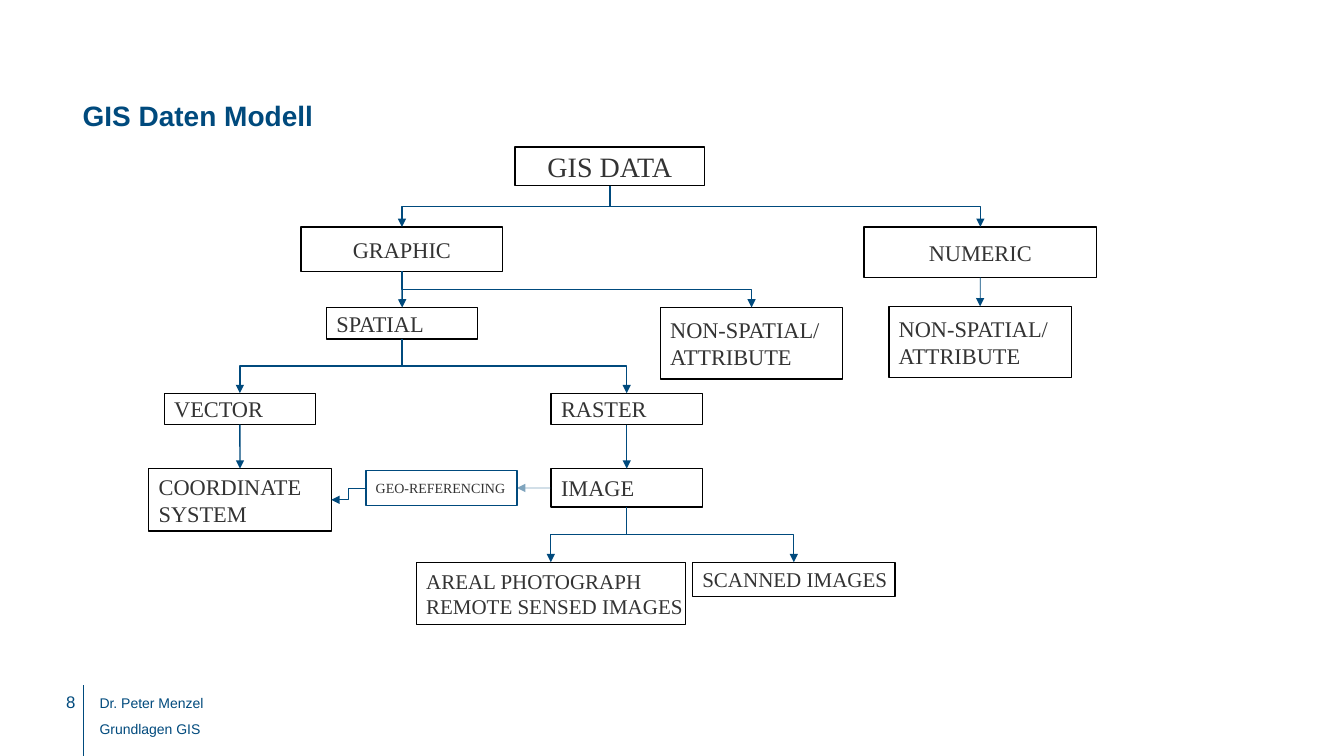
from lxml.etree import SubElement
from pptx import Presentation
from pptx.dml.color import RGBColor
from pptx.enum.shapes import MSO_CONNECTOR, MSO_SHAPE
from pptx.enum.text import MSO_ANCHOR, PP_ALIGN
from pptx.oxml.ns import qn
from pptx.util import Cm, Pt


class Theme:
    blue = RGBColor(0x00, 0x4A, 0x7D)
    black = RGBColor(0, 0, 0)
    grey = RGBColor(0x33, 0x33, 0x33)
    sans, serif = "Arial", "Times New Roman"
    head, node, leaf, number, small = 20, 16, 15, 12, 10
    thin, thick = Pt(0.5), Pt(1)


def write(frame, text, size, face, color, align=PP_ALIGN.LEFT, gap=1.0, bold=False):
    frame.text = text
    for para in frame.paragraphs:
        para.alignment = align
        para.line_spacing = gap
        para.font.size = Pt(size)
        para.font.name = face
        para.font.bold = bold
        para.font.color.rgb = color


def link(kind, start, end, width):
    line = slide.shapes.add_connector(kind, *start, *end)
    line.line.color.rgb = Theme.blue
    line.line.width = width
    SubElement(line._element.spPr, qn("a:effectLst"))
    return line


deck = Presentation()
deck.slide_width, deck.slide_height = Cm(33.87), Cm(19.05)
slide = deck.slides.add_slide(deck.slide_layouts[5])

link(MSO_CONNECTOR.STRAIGHT, (Cm(2.11), Cm(19.05)), (Cm(2.11), Cm(17.27)), Theme.thin)

title = slide.shapes.title
title.left, title.top, title.width, title.height = Cm(2.08), Cm(2.57), Cm(30.5), Cm(2.16)
frame = title.text_frame
frame.margin_left = frame.margin_top = 0
frame.vertical_anchor = MSO_ANCHOR.TOP
write(frame, "GIS Daten Modell", Theme.head, Theme.sans, Theme.blue, gap=0.9, bold=True)

footers = [
    ("8", 0.53, 17.42, 1.37, 1.02, Theme.number, PP_ALIGN.RIGHT, 1.0),
    ("Dr. Peter Menzel\nGrundlagen GIS", 2.51, 17.3, 19.08, 1.47, Theme.small, PP_ALIGN.LEFT, 1.5),
]
for text, left, top, width, height, size, align, gap in footers:
    frame = slide.shapes.add_textbox(Cm(left), Cm(top), Cm(width), Cm(height)).text_frame
    frame.word_wrap = True
    frame.margin_left = frame.margin_top = frame.margin_right = 0
    write(frame, text, size, Theme.sans, Theme.blue, align, gap)

mid, side = PP_ALIGN.CENTER, PP_ALIGN.LEFT
nodes = {
    "data": ("GIS DATA", 12.98, 3.71, 4.78, 0.97, Theme.head, mid),
    "graphic": ("GRAPHIC", 7.59, 5.72, 5.08, 1.12, Theme.node, mid),
    "numeric": ("NUMERIC", 21.77, 5.72, 5.87, 1.27, Theme.node, mid),
    "spatial": ("SPATIAL", 8.23, 7.75, 3.81, 0.79, Theme.node, side),
    "other": ("NON-SPATIAL/\nATTRIBUTE", 16.64, 7.75, 4.6, 1.8, Theme.node, side),
    "values": ("NON-SPATIAL/\nATTRIBUTE", 22.4, 7.72, 4.6, 1.8, Theme.node, side),
    "vector": ("VECTOR", 4.14, 9.91, 3.81, 0.79, Theme.node, side),
    "raster": ("RASTER", 13.89, 9.91, 3.81, 0.79, Theme.node, side),
    "system": ("COORDINATE\nSYSTEM", 3.75, 11.81, 4.6, 1.57, Theme.node, side),
    "image": ("IMAGE", 13.89, 11.81, 3.81, 0.97, Theme.node, side),
    "georef": ("GEO-REFERENCING", 9.22, 11.85, 3.81, 0.89, Theme.small, side),
    "photo": ("AREAL PHOTOGRAPH\nREMOTE SENSED IMAGES", 10.49, 14.17, 6.78, 1.57, Theme.leaf, side),
    "scan": ("SCANNED IMAGES", 17.45, 14.17, 5.11, 0.86, Theme.leaf, side),
}
boxes = {}
for name, (text, left, top, width, height, size, align) in nodes.items():
    box = slide.shapes.add_shape(MSO_SHAPE.RECTANGLE, Cm(left), Cm(top), Cm(width), Cm(height))
    box.shadow.inherit = False
    box.fill.background()
    box.line.color.rgb = Theme.blue if name == "georef" else Theme.black
    box.line.width = Theme.thick
    box.text_frame.word_wrap = False
    box.text_frame.vertical_anchor = MSO_ANCHOR.MIDDLE
    write(box.text_frame, text, size, Theme.serif, Theme.grey, align)
    boxes[name] = box

TOP, LEFT, BOTTOM, RIGHT = range(4)
down, back = (BOTTOM, TOP), (LEFT, RIGHT)
bent, straight = MSO_CONNECTOR.ELBOW, MSO_CONNECTOR.STRAIGHT
links = [
    ("data", "graphic", bent, down, Theme.thick),
    ("data", "numeric", bent, down, Theme.thick),
    ("graphic", "spatial", straight, down, Theme.thick),
    ("graphic", "other", bent, down, Theme.thick),
    ("numeric", "values", straight, down, Theme.thin),
    ("spatial", "vector", bent, down, Theme.thick),
    ("spatial", "raster", bent, down, Theme.thick),
    ("vector", "system", straight, down, Theme.thick),
    ("raster", "image", straight, down, Theme.thick),
    ("image", "scan", bent, down, Theme.thick),
    ("image", "photo", bent, down, Theme.thick),
    ("image", "georef", straight, back, Theme.thin),
    ("georef", "system", bent, back, Theme.thin),
]
for start, end, kind, sites, width in links:
    line = link(kind, (0, 0), (0, 0), width)
    line.begin_connect(boxes[start], sites[0])
    line.end_connect(boxes[end], sites[1])
    if kind == bent and sites == down:
        run, drop = line.end_x - line.begin_x, line.end_y - line.begin_y
        line.left = (line.begin_x + line.end_x - drop) // 2
        line.top = (line.begin_y + line.end_y - abs(run)) // 2
        line.width, line.height = drop, abs(run)
        frame = line._element.spPr.xfrm
        frame.flipH, frame.flipV = run > 0, False
        frame.set("rot", str((270 if run > 0 else 90) * 60000))
    stroke = line.line._get_or_add_ln()
    SubElement(stroke, qn("a:tailEnd"), type="triangle")
    if (start, end) == ("image", "georef"):
        SubElement(stroke.find(".//" + qn("a:srgbClr")), qn("a:alpha"), val="50000")

deck.save("out.pptx")
